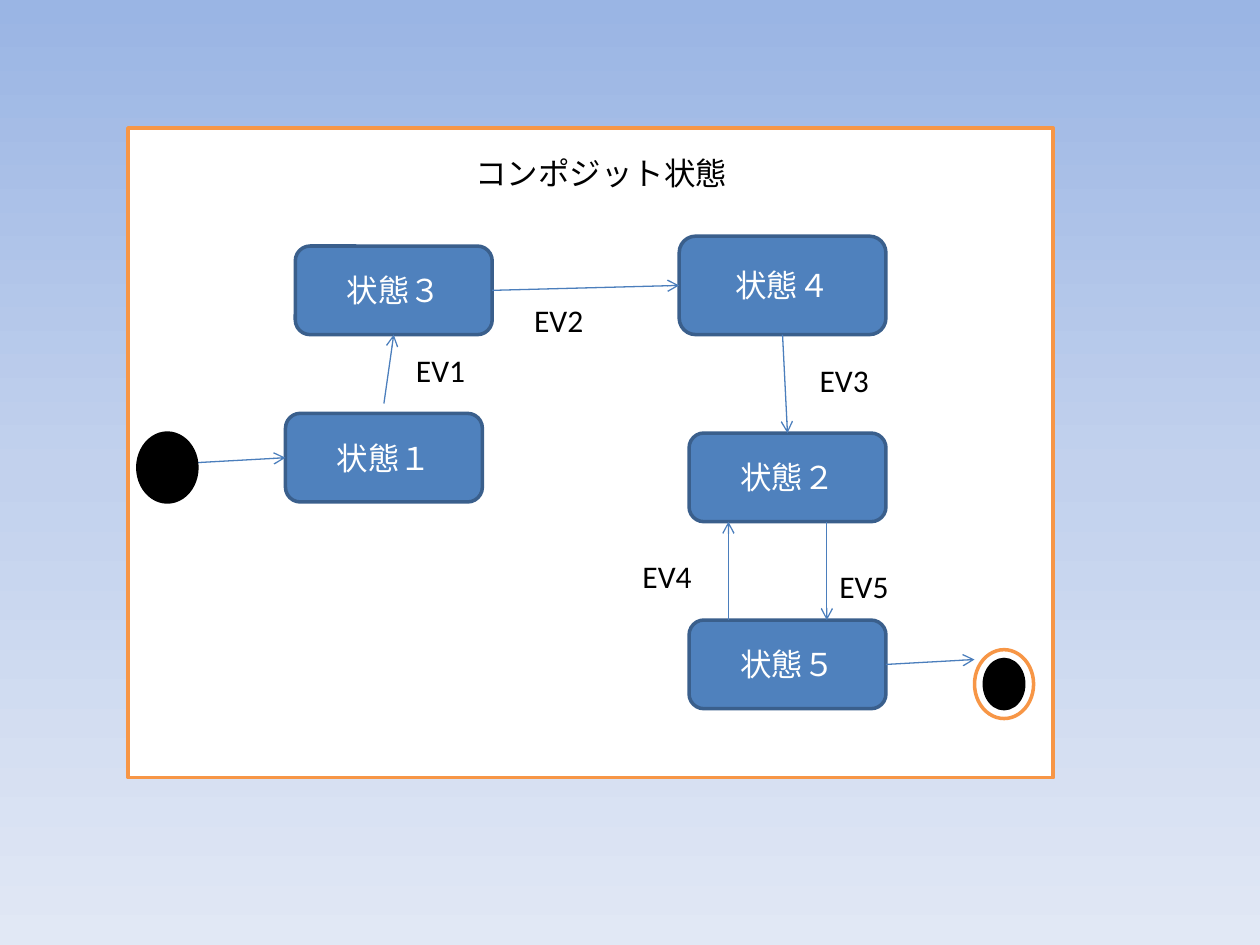
from copy import deepcopy
from dataclasses import dataclass

from pptx import Presentation
from pptx.dml.color import RGBColor
from pptx.enum.shapes import MSO_CONNECTOR as Connector, MSO_SHAPE as Shape
from pptx.enum.text import MSO_ANCHOR as Anchor, MSO_AUTO_SIZE as AutoSize, PP_ALIGN as Align
from pptx.oxml.ns import qn
from pptx.util import Inches, Pt
from lxml.etree import SubElement


@dataclass(frozen=True)
class Theme:
    font: str = "Calibri"
    size: float = 18
    outline: float = 2
    arrow_width: float = 0.75
    white: str = "FFFFFF"
    black: str = "000000"
    orange: str = "F79646"
    state: str = "4F81BD"
    state_line: str = "3A5F8C"
    arrow: str = "4B7EBC"
    sky: tuple = ((0, "9AB5E4"), (0.5, "C2D1ED"), (1, "E1E8F5"))


theme = Theme()
presentation = Presentation()
presentation.slide_width, presentation.slide_height = Inches(10), Inches(7.5)
slide = presentation.slides.add_slide(presentation.slide_layouts[5])
shapes = slide.shapes

# The grid has 128 columns and 96 rows of square cells.
CELL = presentation.slide_width // 128
TEXT_ROWS = 5


def add_outlined(kind, cells, fill, line):
    shape = shapes.add_shape(kind, *(n * CELL for n in cells))
    shape.shadow.inherit = False
    shape.fill.solid()
    shape.fill.fore_color.rgb = RGBColor.from_string(fill)
    shape.line.color.rgb = RGBColor.from_string(line)
    shape.line.width = Pt(theme.outline)
    return shape


def write(shape, text, color, align):
    frame = shape.text_frame
    frame.text = text
    paragraph = frame.paragraphs[0]
    paragraph.alignment = align
    paragraph.font.name = theme.font
    paragraph.font.size = Pt(theme.size)
    paragraph.font.color.rgb = RGBColor.from_string(color)
    return frame


# Background
background = slide.background.fill
background.gradient()
background.gradient_angle = 270
first_stop = background.gradient_stops[0]._gs
first_stop.addnext(deepcopy(first_stop))
for stop, (position, color) in zip(background.gradient_stops, theme.sky):
    stop.position = position
    stop.color.rgb = RGBColor.from_string(color)

# Composite state: its frame lies behind the title
composite = add_outlined(Shape.RECTANGLE, (13, 13, 94, 66), theme.white, theme.orange)
title = shapes.title
title._element.addprevious(composite._element)
title.left, title.top, title.width, title.height = (
    n * CELL for n in (47, 15, 34, TEXT_ROWS))
title_frame = write(title, "コンポジット状態", theme.black, Align.LEFT)
title_frame.vertical_anchor = Anchor.TOP
title_frame.auto_size = AutoSize.SHAPE_TO_FIT_TEXT

# States
states = {}
for name, cells in {
    "状態３": (30, 25, 20, 9),
    "状態１": (29, 42, 20, 9),
    "状態４": (69, 24, 21, 10),
    "状態２": (70, 44, 20, 9),
    "状態５": (70, 63, 20, 9),
}.items():
    states[name] = add_outlined(Shape.ROUNDED_RECTANGLE, cells, theme.state, theme.state_line)
    frame = write(states[name], name, theme.white, Align.CENTER)
    frame.vertical_anchor = Anchor.MIDDLE

# Event labels
for event, column, row, columns in (
    ("EV1", 41, 35, 14),
    ("EV2", 53, 30, 14),
    ("EV3", 82, 36, 8),
    ("EV4", 64, 56, 8),
    ("EV5", 84, 57, 20),
):
    label = shapes.add_textbox(*(n * CELL for n in (column, row, columns, TEXT_ROWS)))
    frame = write(label, event, theme.black, Align.LEFT)
    frame.word_wrap = True
    frame.auto_size = AutoSize.SHAPE_TO_FIT_TEXT

# Transitions: each end is a (state, side) pair or a (column, row) point
TOP, LEFT, BOTTOM, RIGHT = range(4)
for start, end in (
    ((39, 41), ("状態３", BOTTOM)),
    (("状態３", RIGHT), ("状態４", LEFT)),
    (("状態４", BOTTOM), ("状態２", TOP)),
    ((84, 53), (84, 63)),
    ((74, 63), (74, 53)),
    ((20, 47), ("状態１", LEFT)),
    (("状態５", RIGHT), (99, 67)),
):
    points = [(0, 0) if end_point[0] in states else end_point for end_point in (start, end)]
    arrow = shapes.add_connector(
        Connector.STRAIGHT, *(n * CELL for point in points for n in point))
    if start[0] in states:
        arrow.begin_connect(states[start[0]], start[1])
    if end[0] in states:
        arrow.end_connect(states[end[0]], end[1])
    arrow.line.color.rgb = RGBColor.from_string(theme.arrow)
    arrow.line.width = Pt(theme.arrow_width)
    SubElement(arrow.line._get_or_add_ln(), qn("a:tailEnd"), type="arrow")
    SubElement(arrow._element.spPr, qn("a:effectLst"))

# Initial state, then the ring and core of the final state
for cells, fill, line in (
    ((14, 44, 6, 7), theme.black, theme.black),
    ((99, 66, 6, 7), theme.white, theme.orange),
    ((100, 67, 4, 5), theme.black, theme.black),
):
    add_outlined(Shape.OVAL, cells, fill, line)

presentation.save("out.pptx")
